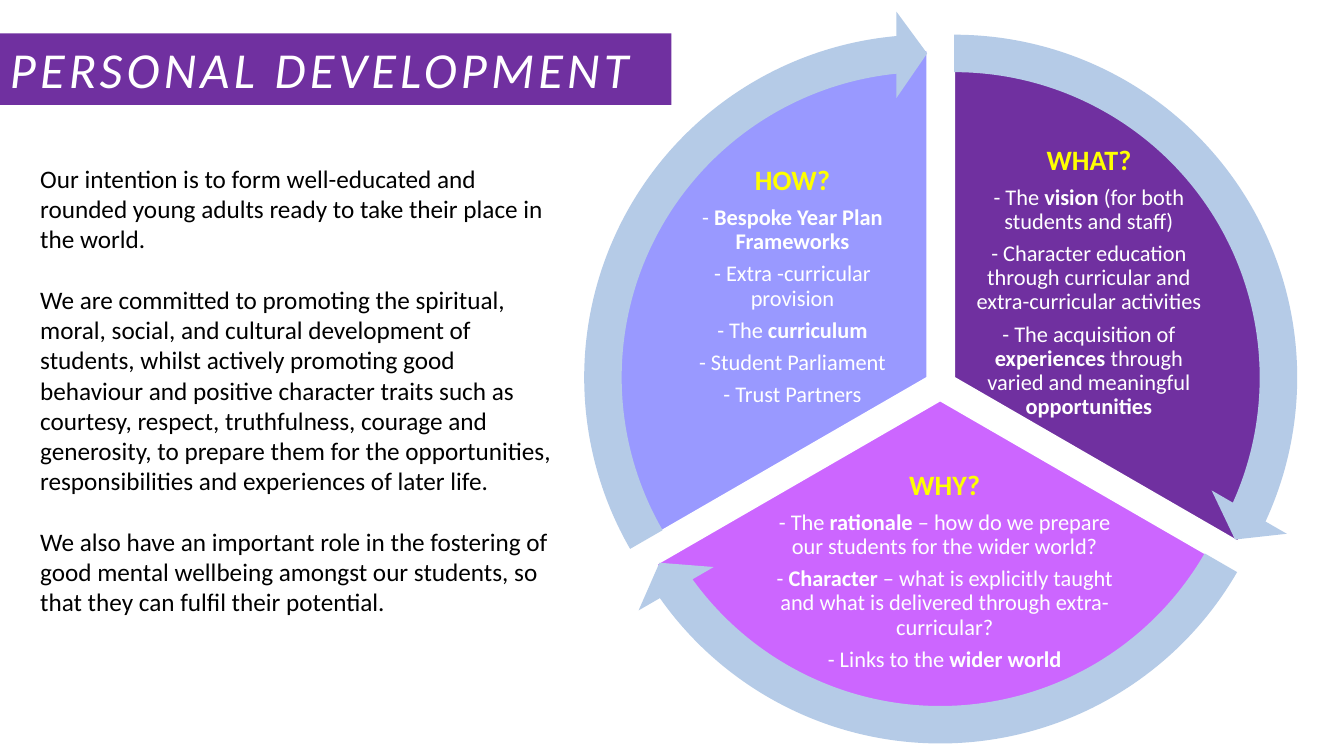
from pptx import Presentation
from pptx.dml.color import RGBColor
from pptx.enum.shapes import MSO_SHAPE
from pptx.enum.text import MSO_ANCHOR, PP_ALIGN
from pptx.util import Inches, Pt

COLORS = {"purple": "7030A0", "pink": "CC66FF", "lilac": "9999FF", "arrow": "B5CBE7",
          "white": "FFFFFF", "yellow": "FFFF00", "black": "000000"}

INTRO = [
    "Our intention is to form well-educated and rounded young adults ready to take "
    "their place in the world.",
    "We are committed to promoting the spiritual, moral, social, and cultural development "
    "of students, whilst actively promoting good behaviour and positive character traits "
    "such as courtesy, respect, truthfulness, courage and generosity, to prepare them for "
    "the opportunities, responsibilities and experiences of later life.",
    "We also have an important role in the fostering of good mental wellbeing amongst our "
    "students, so that they can fulfil their potential.",
]

# Each segment: colour, pie position, start and end angle, text box, heading, points (** marks bold)
PIE_SIZE = 6.49
SEGMENTS = [
    ("purple", (6.22, 0.5), (270, 30), (9.64, 1.84, 2.32, 1.93), "WHAT?", [
        "- The **vision** (for both students and staff)",
        "- Character education through curricular and extra-curricular activities",
        "- The acquisition of **experiences** through varied and meaningful **opportunities**"]),
    ("pink", (6.08, 0.73), (30, 150), (7.63, 4.82, 3.48, 1.7), "WHY?", [
        "- The **rationale** – how do we prepare our students for the wider world?",
        "- **Character** – what is explicitly taught and what is delivered through "
        "extra-curricular?",
        "- Links to the **wider world**"]),
    ("lilac", (5.95, 0.5), (150, 270), (6.7, 1.88, 2.32, 1.93), "HOW?", [
        "- **Bespoke Year Plan Frameworks**",
        "- Extra -curricular provision",
        "- The **curriculum**",
        "- Student Parliament",
        "- Trust Partners"]),
]

# Each arrow: position, head angle and start angle
ARROW_SIZE = 7.29
ARROWS = [((5.82, 0.1), 24.54, 269.99), ((5.68, 0.33), 144.53, 30.01),
          ((5.55, 0.1), 264.55, 150)]


def rgb(name):
    return RGBColor.from_string(COLORS[name])


def angle(degrees):
    """Angle as an adjustment value."""
    return degrees * 0.6


def add_run(p, text, color, **font):
    r = p.add_run()
    r.text = text
    r.font.color.rgb = rgb(color)
    for name, value in {"name": "Calibri", **font}.items():
        setattr(r.font, name, value)
    return r


def add_filled(s, kind, box, fill, adjustments=(), outline=None):
    sp = s.shapes.add_shape(kind, *map(Inches, box))
    sp.shadow.inherit = False
    sp.fill.solid()
    sp.fill.fore_color.rgb = rgb(fill)
    if outline:
        sp.line.color.rgb = rgb(outline)
        sp.line.width = Pt(1)
    else:
        sp.line.fill.background()
    for i, value in enumerate(adjustments):
        sp.adjustments[i] = value
    return sp


def add_text(s, box, **frame):
    tf = s.shapes.add_textbox(*map(Inches, box)).text_frame
    for name, value in {"word_wrap": True, **frame}.items():
        setattr(tf, name, value)
    return tf


def next_paragraph(tf, first, **spacing):
    p = tf.paragraphs[0] if first else tf.add_paragraph()
    for name, value in spacing.items():
        setattr(p, name, value)
    return p


def add_title(s, text):
    sp = add_filled(s, MSO_SHAPE.RECTANGLE, (0, 0.33, 6.66, 0.71), "purple")
    tf = sp.text_frame
    tf.vertical_anchor = MSO_ANCHOR.TOP
    p = next_paragraph(tf, True, alignment=PP_ALIGN.LEFT)
    r = add_run(p, text, "white", size=Pt(36), italic=True)
    r.font._element.set("spc", "300")


def add_intro(s):
    tf = add_text(s, (0.3, 1.57, 5.38, 4.95))
    for i, text in enumerate(INTRO):
        p = next_paragraph(tf, i == 0, space_before=Pt(21.6 if i else 0))
        add_run(p, text, "black", size=Pt(18))


def add_segment(s, color, position, angles, text_box, heading, points):
    add_filled(s, MSO_SHAPE.PIE, (*position, PIE_SIZE, PIE_SIZE), color,
               map(angle, angles), "white")
    inset = Inches(0.03)
    tf = add_text(s, text_box, vertical_anchor=MSO_ANCHOR.MIDDLE, margin_left=inset,
                  margin_top=inset, margin_right=inset, margin_bottom=inset)
    layout = {"alignment": PP_ALIGN.CENTER, "line_spacing": 0.9}
    p = next_paragraph(tf, True, space_after=Pt(7), **layout)
    add_run(p, heading, "yellow", size=Pt(20), bold=True)
    for point in points:
        p = next_paragraph(tf, False, space_after=Pt(5.6), **layout)
        for i, part in enumerate(point.split("**")):
            if part:
                add_run(p, part, "white", size=Pt(16), bold=i % 2 == 1)


def add_cycle_arrow(s, position, head, start):
    add_filled(s, MSO_SHAPE.CIRCULAR_ARROW, (*position, ARROW_SIZE, ARROW_SIZE), "arrow",
               (0.051, angle(5.46), angle(head), angle(start), 0.059))


def main():
    prs = Presentation()
    prs.slide_width, prs.slide_height = Inches(13.33), Inches(7.5)
    s = prs.slides.add_slide(prs.slide_layouts[6])

    # Title and introduction
    add_title(s, "PERSONAL DEVELOPMENT")
    add_intro(s)

    # Wheel of three segments, with arrows around it
    for segment in SEGMENTS:
        add_segment(s, *segment)
    for arrow in ARROWS:
        add_cycle_arrow(s, *arrow)

    prs.save("out.pptx")


if __name__ == "__main__":
    main()
